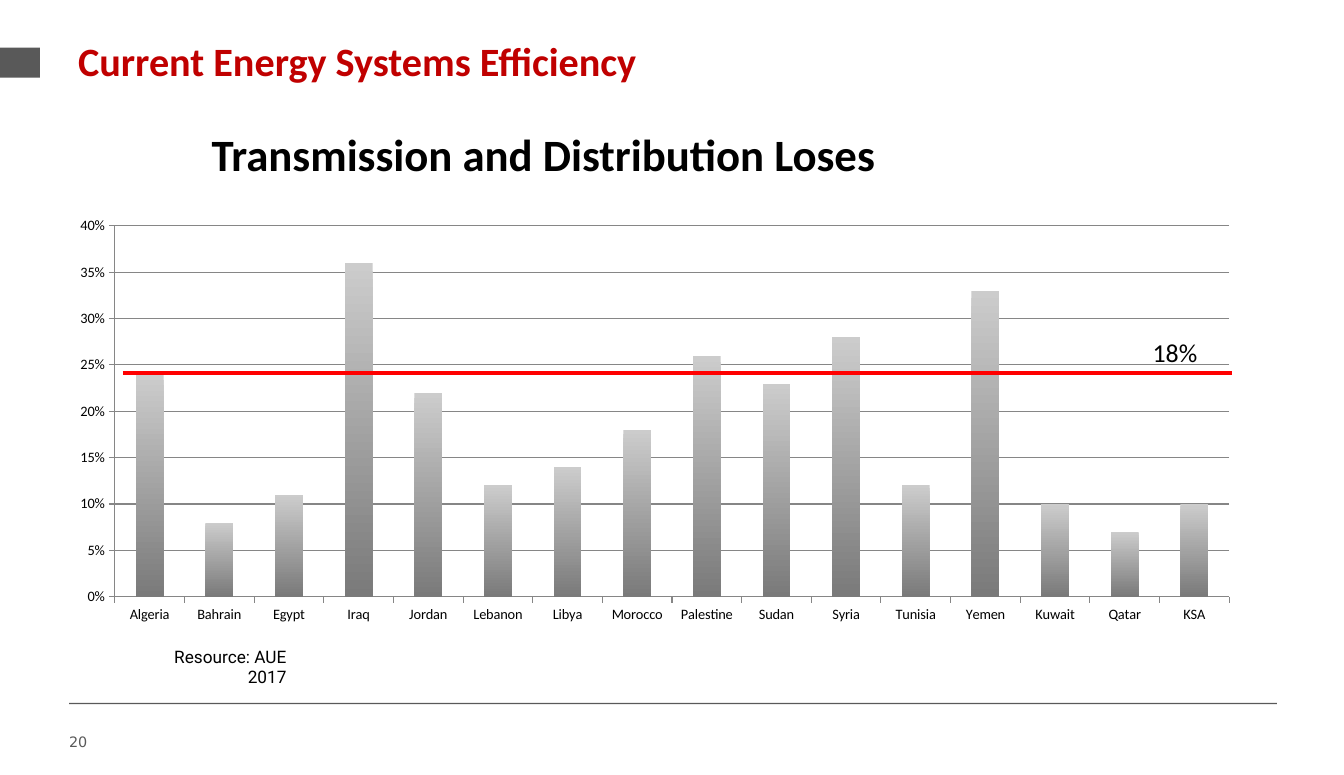
from dataclasses import dataclass

from lxml import etree
from pptx import Presentation
from pptx import util as u
from pptx.chart import data as chart_data
from pptx.dml.color import RGBColor
from pptx.enum import chart as charts, shapes, text
from pptx.oxml import parse_xml
from pptx.oxml.ns import nsdecls, qn

GREY, AXIS_GREY, BLACK = "595959", "868686", "000000"
LOSSES = {
    "Algeria": 0.24, "Bahrain": 0.08, "Egypt": 0.11, "Iraq": 0.36,
    "Jordan": 0.22, "Lebanon": 0.12, "Libya": 0.14, "Morocco": 0.18,
    "Palestine": 0.26, "Sudan": 0.23, "Syria": 0.28, "Tunisia": 0.12,
    "Yemen": 0.33, "Kuwait": 0.1, "Qatar": 0.07, "KSA": 0.1,
}


@dataclass
class Area:
    """Left, top, width and height in centimetres."""
    left: float
    top: float
    width: float
    height: float

    def lengths(self) -> tuple:
        return tuple(u.Cm(v) for v in (self.left, self.top, self.width, self.height))


@dataclass
class Label:
    words: str
    area: Area
    size: float
    font: str = "Calibri"
    color: str = BLACK
    bold: bool = False
    align: text.PP_ALIGN = text.PP_ALIGN.LEFT
    anchor: text.MSO_ANCHOR = text.MSO_ANCHOR.TOP
    inset: float = 0.25
    wrap: bool = True


TITLE = Label("Current Energy Systems Efficiency", Area(1.67, 0.76, 29.72, 3.18),
              28, color="C00000", bold=True)
LABELS = [
    Label("20", Area(1.7, 17.89, 7.7, 1.32), 10, "DejaVu Sans", GREY, inset=0),
    Label("Transmission and Distribution Loses", Area(1.8, 2.72, 23.11, 2.11), 31.2,
          bold=True, align=text.PP_ALIGN.CENTER, anchor=text.MSO_ANCHOR.MIDDLE),
    Label("18%", Area(28.07, 8.15, 1.63, 1.02), 18, wrap=False),
    Label("Resource: AUE 2017", Area(3.05, 16.01, 4.24, 0.76), 12, "Roboto",
          align=text.PP_ALIGN.RIGHT, anchor=text.MSO_ANCHOR.MIDDLE),
]
BARS = [Area(0, 1.17, 0.98, 0.74), Area(1.7, 17.28, 29.67, 0.03)]


def rgb(color: str) -> RGBColor:
    return RGBColor.from_string(color)


def fill_label(box, label: Label) -> None:
    box.left, box.top, box.width, box.height = label.area.lengths()
    frame = box.text_frame
    frame.text = label.words
    frame.auto_size = text.MSO_AUTO_SIZE.NONE
    frame.word_wrap = label.wrap
    frame.vertical_anchor = label.anchor
    frame.margin_left = frame.margin_right = u.Cm(label.inset)
    para = frame.paragraphs[0]
    para.alignment = label.align
    para.font.name, para.font.size = label.font, u.Pt(label.size)
    para.font.bold, para.font.color.rgb = label.bold, rgb(label.color)


def add_bar(page, area: Area) -> None:
    bar = page.shapes.add_shape(shapes.MSO_SHAPE.RECTANGLE, *area.lengths())
    bar.shadow.inherit = False
    bar.fill.solid()
    bar.fill.fore_color.rgb = rgb(GREY)
    bar.line.fill.background()


def set_plot_area(chart, x: float, y: float, w: float, h: float) -> None:
    """Fix the inner plot area, in fractions of the chart."""
    plot_area = chart.plots[0]._element.getparent()
    for old in plot_area.findall(qn("c:layout")):
        plot_area.remove(old)
    sizes = "".join(f'<c:{k} val="{v}"/>' for k, v in zip("xywh", (x, y, w, h)))
    plot_area.insert(0, parse_xml(
        f'<c:layout {nsdecls("c")}><c:manualLayout><c:layoutTarget val="inner"/>'
        f'<c:xMode val="edge"/><c:yMode val="edge"/>{sizes}'
        f'</c:manualLayout></c:layout>'))


def add_loss_chart(page, area: Area) -> None:
    data = chart_data.CategoryChartData(number_format="0%")
    data.categories = list(LOSSES)
    data.add_series("Series 1", list(LOSSES.values()))
    chart = page.shapes.add_chart(
        charts.XL_CHART_TYPE.COLUMN_CLUSTERED, *area.lengths(), data).chart
    chart.has_legend = chart.has_title = False
    chart.font.name, chart.font.size = "Calibri", u.Pt(10)
    chart.font.color.rgb = rgb(BLACK)
    set_plot_area(chart, 0.05, 0.04, 0.93, 0.88)

    plot = chart.plots[0]
    plot.vary_by_categories = False
    plot.gap_width = 150
    fill = plot.series[0].format.fill
    fill.gradient()
    fill.gradient_angle = 270
    for stop, color in zip(fill.gradient_stops, ("CCCCCC", "7A7A7A")):
        stop.color.rgb = rgb(color)

    values = chart.value_axis
    values.minimum_scale, values.maximum_scale, values.major_unit = 0, 0.4, 0.05
    values.tick_labels.number_format = "0%"
    values.tick_labels.number_format_is_linked = False
    values.has_major_gridlines = True
    for axis in (values, chart.category_axis):
        axis.major_tick_mark = charts.XL_TICK_MARK.OUTSIDE
    for part in (values, values.major_gridlines, chart.category_axis):
        part.format.line.color.rgb = rgb(AXIS_GREY)
        part.format.line.width = u.Pt(0.75)


def add_average_line(page, left: float, right: float, height: float) -> None:
    line = page.shapes.add_connector(
        shapes.MSO_CONNECTOR.STRAIGHT, u.Cm(left), u.Cm(height), u.Cm(right), u.Cm(height))
    line.line.color.rgb = rgb("FF0000")
    line.line.width = u.Pt(3)
    etree.SubElement(line._element.spPr, qn("a:effectLst"))


def main() -> None:
    deck = Presentation()
    deck.slide_width, deck.slide_height = u.Cm(33.02), u.Cm(19.05)
    page = deck.slides.add_slide(deck.slide_layouts.get_by_name("Title Only"))
    fill_label(page.shapes.title, TITLE)
    for area in BARS:
        add_bar(page, area)
    add_loss_chart(page, Area(1.35, 5.14, 29.44, 10.36))
    add_average_line(page, 3.02, 30.28, 9.17)
    for label in LABELS:
        fill_label(page.shapes.add_textbox(*label.area.lengths()), label)
    deck.save("out.pptx")


if __name__ == "__main__":
    main()
